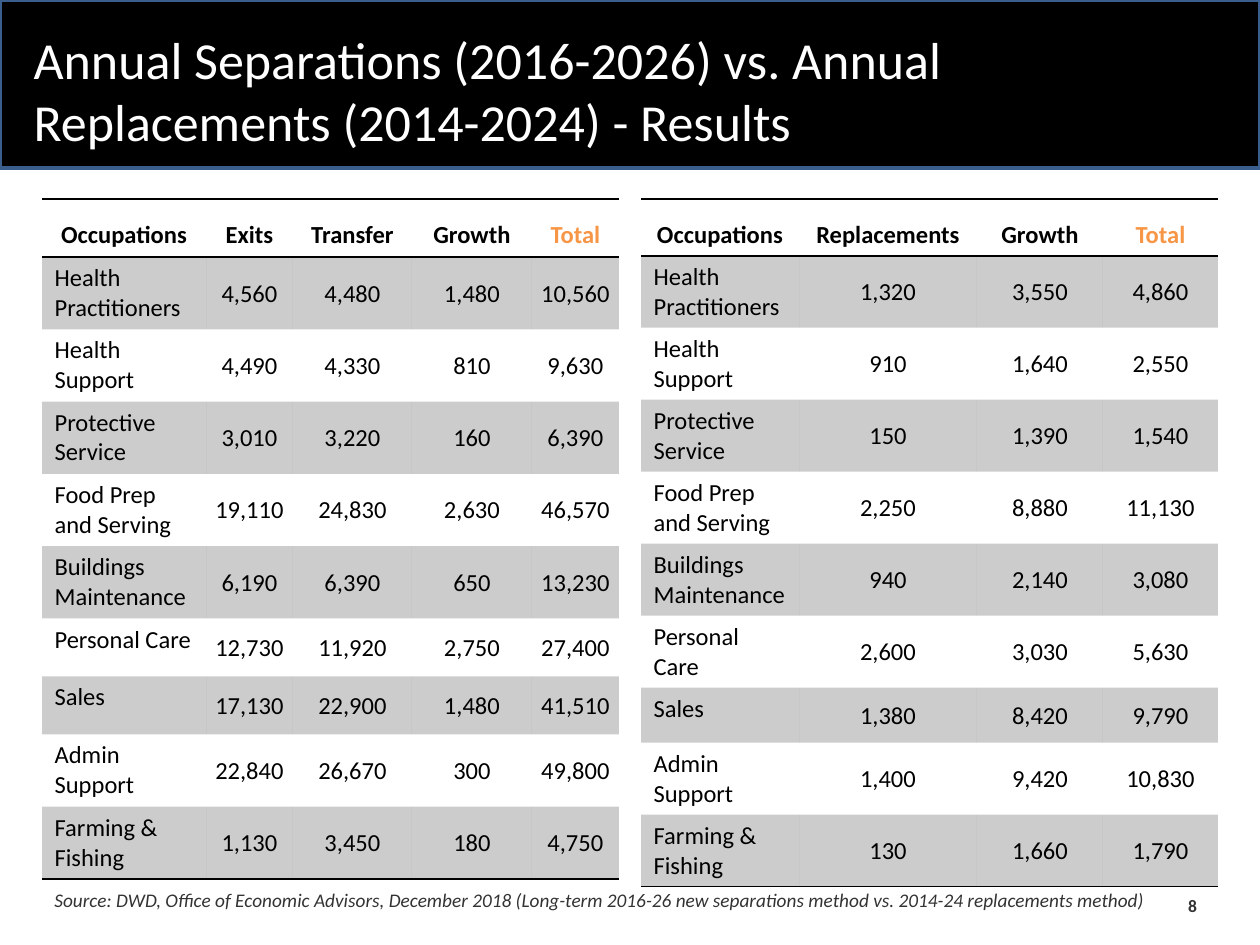
from dataclasses import dataclass

import pptx
import pptx.dml.color
import pptx.enum.text
import pptx.oxml
import pptx.oxml.ns
import pptx.util

PX = 914400 / 126
ALIGN = pptx.enum.text.PP_ALIGN
ANCHOR = pptx.enum.text.MSO_ANCHOR
NO_STYLE = "{2D5ABB26-0587-4C30-8999-92F81FD0307C}"


@dataclass(frozen=True)
class Theme:
    """Colours, font and type sizes of the slide."""
    font: str = "Calibri"
    black: str = "000000"
    white: str = "FFFFFF"
    orange: str = "F79646"
    grey: str = "333333"
    blue: str = "3A5F8C"
    title_size: float = 29.7
    table_size: float = 14
    source_size: float = 11
    number_size: float = 10


THEME = Theme()
TITLE = "Annual Separations (2016-2026) vs. Annual Replacements (2014-2024) - Results"
SOURCE = ("Source: DWD, Office of Economic Advisors, December 2018 "
          "(Long-term 2016-26 new separations method vs. 2014-24 replacements method)")
OCCUPATIONS = ["Health Practitioners", "Health Support", "Protective Service",
               "Food Prep and Serving", "Buildings Maintenance", "Personal Care",
               "Sales", "Admin Support", "Farming & Fishing"]
SEPARATIONS = {
    "headers": ["Occupations", "Exits", "Transfer", "Growth", "Total"],
    "widths": [164, 87, 119, 120, 87],
    "short_height": 58,
    "short_rows": ["Personal Care", "Sales"],
    "values": [
        [4560, 4480, 1480, 10560], [4490, 4330, 810, 9630], [3010, 3220, 160, 6390],
        [19110, 24830, 2630, 46570], [6190, 6390, 650, 13230],
        [12730, 11920, 2750, 27400], [17130, 22900, 1480, 41510],
        [22840, 26670, 300, 49800], [1130, 3450, 180, 4750]],
}
REPLACEMENTS = {
    "headers": ["Occupations", "Replacements", "Growth", "Total"],
    "widths": [158, 178, 126, 115],
    "short_height": 55,
    "short_rows": ["Sales"],
    "values": [
        [1320, 3550, 4860], [910, 1640, 2550], [150, 1390, 1540],
        [2250, 8880, 11130], [940, 2140, 3080], [2600, 3030, 5630],
        [1380, 8420, 9790], [1400, 9420, 10830], [130, 1660, 1790]],
}


def emu(pixels):
    """Turn px into EMU."""
    return pptx.util.Emu(round(pixels * PX))


def rgb(colour):
    """Turn a hex string into a colour."""
    return pptx.dml.color.RGBColor.from_string(colour)


def apply(target, formats):
    """Set each attribute named in a dict of format values."""
    for name, value in formats.items():
        setattr(target, name, value)


def write(frame, text, size, colour, bold=False, italic=False, **paragraph_formats):
    """Write one formatted paragraph into a text frame."""
    frame.text = text
    paragraph = frame.paragraphs[0]
    apply(paragraph, paragraph_formats)
    font = paragraph.runs[0].font
    apply(font, {"name": THEME.font, "size": pptx.util.Pt(size),
                 "bold": bold, "italic": italic})
    font.color.rgb = rgb(colour)


def add_border(cell, sides):
    """Draw thin black borders on the given sides of a cell."""
    properties = cell._tc.get_or_add_tcPr()
    for index, side in enumerate(sides):
        properties.insert(index, pptx.oxml.parse_xml(
            f'<a:ln{side} {pptx.oxml.ns.nsdecls("a")} w="12700"><a:solidFill>'
            f'<a:srgbClr val="{THEME.black}"/></a:solidFill></a:ln{side}>'))


def shade(cell):
    """Fill a cell with black at 20 percent opacity."""
    cell.fill.solid()
    cell.fill.fore_color.rgb = rgb(THEME.black)
    colour = cell._tc.tcPr.find(".//" + pptx.oxml.ns.qn("a:srgbClr"))
    colour.append(pptx.oxml.parse_xml(
        f'<a:alpha {pptx.oxml.ns.nsdecls("a")} val="20000"/>'))


def add_heading(slide, left, top, width, height):
    """Place the black band with the title on it."""
    band = slide.shapes.add_shape(1, *map(emu, (left, top, width, height)))
    band.shadow.inherit = False
    band.fill.solid()
    band.fill.fore_color.rgb = rgb(THEME.black)
    band.line.color.rgb = rgb(THEME.blue)
    band.line.width = pptx.util.Pt(2)
    slide.shapes._spTree.insert(2, band._element)
    title = slide.shapes.title
    apply(title, {"left": emu(left + 21), "top": emu(top + 21),
                  "width": emu(998), "height": emu(105)})
    apply(title.text_frame, {"word_wrap": True, "vertical_anchor": ANCHOR.TOP,
                             "auto_size": pptx.enum.text.MSO_AUTO_SIZE.NONE})
    write(title.text_frame, TITLE, THEME.title_size, THEME.white, alignment=ALIGN.LEFT)


def add_occupation_table(slide, left, top, data, tall_height=72):
    """Place a table of occupations with its header, labels and values."""
    headers, widths = data["headers"], data["widths"]
    heights = [data["short_height"]] + [
        data["short_height"] if name in data["short_rows"] else tall_height
        for name in OCCUPATIONS]
    table = slide.shapes.add_table(
        len(heights), len(widths),
        *map(emu, (left, top, sum(widths), sum(heights)))).table
    apply(table, {"first_row": False, "horz_banding": False})
    table._tbl.tblPr.find(pptx.oxml.ns.qn("a:tableStyleId")).text = NO_STYLE
    for column, width in zip(table.columns, widths):
        column.width = emu(width)
    for row, height in zip(table.rows, heights):
        row.height = emu(height)

    for index, header in enumerate(headers):
        cell = table.cell(0, index)
        colour = THEME.orange if header == "Total" else THEME.black
        write(cell.text_frame, header, THEME.table_size, colour, bold=True,
              alignment=ALIGN.CENTER, line_spacing=1.5)
        cell.fill.background()
        add_border(cell, "TB")

    number_cell = {"vertical_anchor": ANCHOR.MIDDLE, "margin_left": emu(1),
                   "margin_right": emu(1), "margin_top": emu(1), "margin_bottom": 0}
    for row, (name, values) in enumerate(zip(OCCUPATIONS, data["values"]), 1):
        for index, text in enumerate([name] + [f"{value:,}" for value in values]):
            cell = table.cell(row, index)
            write(cell.text_frame, text, THEME.table_size, THEME.black,
                  alignment=ALIGN.CENTER if index else ALIGN.LEFT)
            if index:
                apply(cell, number_cell)
            if row % 2:
                shade(cell)
            else:
                cell.fill.background()
            if row == len(OCCUPATIONS):
                add_border(cell, "B")


def add_note(slide, box, text, size, **formats):
    """Place a one-line grey note in a box."""
    frame = slide.shapes.add_textbox(*map(emu, box)).text_frame
    apply(frame, {"word_wrap": False, "vertical_anchor": ANCHOR.MIDDLE})
    write(frame, text, size, THEME.grey, **formats)


def main():
    """Build the slide and save it."""
    presentation = pptx.Presentation()
    apply(presentation, {"slide_width": emu(1260), "slide_height": emu(945)})
    slide = presentation.slides.add_slide(presentation.slide_layouts[5])
    add_heading(slide, 0, 0, 1260, 168)
    add_occupation_table(slide, 42, 199, SEPARATIONS)
    add_note(slide, (1166, 879, 53, 53), "8", THEME.number_size,
             bold=True, alignment=ALIGN.CENTER)
    add_occupation_table(slide, 641, 199, REPLACEMENTS)
    add_note(slide, (42, 879, 1122, 42), SOURCE, THEME.source_size,
             italic=True, alignment=ALIGN.LEFT)
    presentation.save("out.pptx")


if __name__ == "__main__":
    main()
